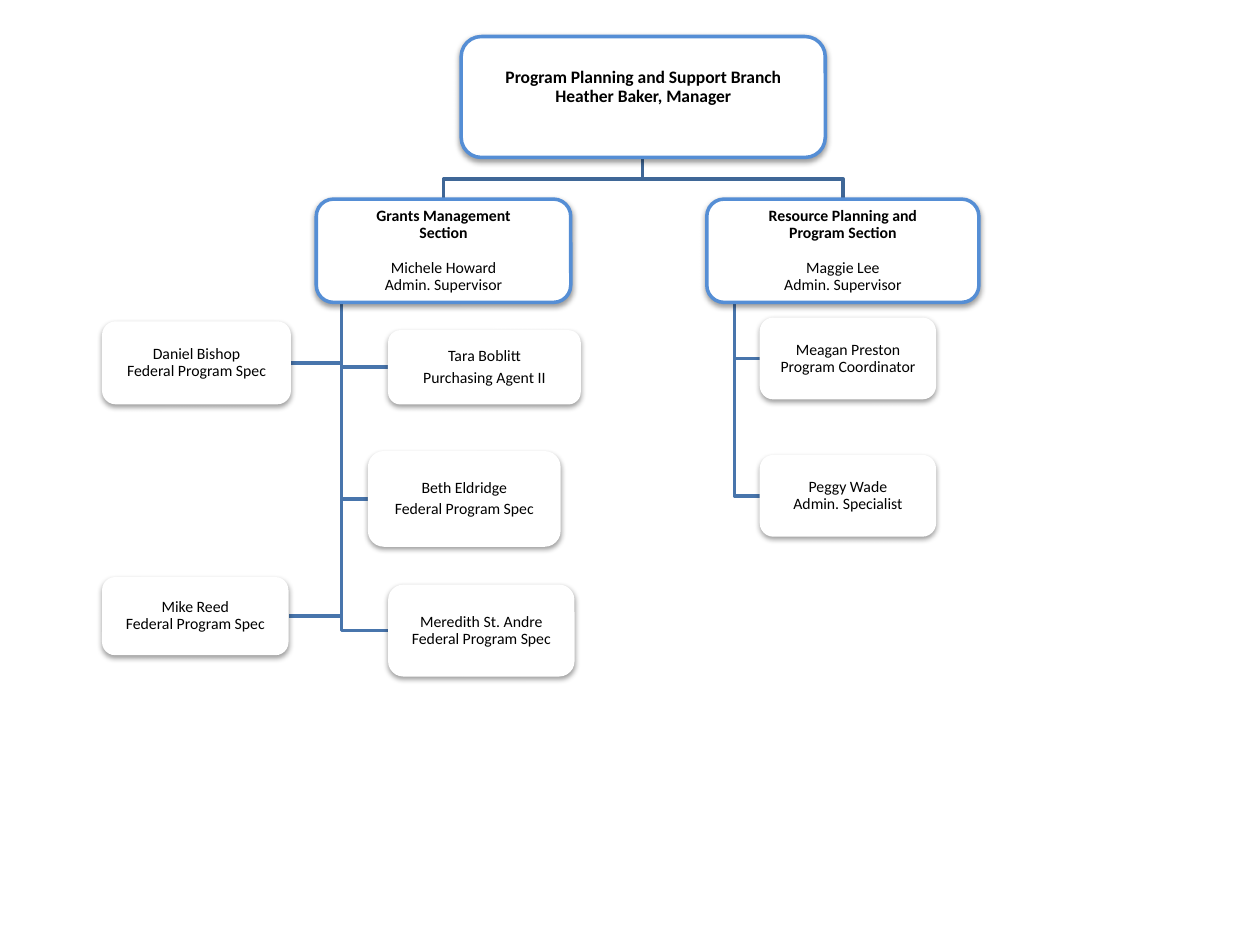
from lxml import etree
from pptx import Presentation
from pptx.dml.color import RGBColor
from pptx.enum import shapes, text
from pptx.oxml import parse_xml
from pptx.util import Inches, Pt

SHADOW = (
    '<a:effectLst xmlns:a="http://schemas.openxmlformats.org/drawingml/2006/main">'
    '<a:outerShdw blurRad="40000" dist="20000" dir="5400000" rotWithShape="0">'
    '<a:srgbClr val="000000"><a:alpha val="38000"/></a:srgbClr>'
    '</a:outerShdw></a:effectLst>'
)


def color(value):
    return RGBColor.from_string(value)


def add_box(s, x, y, w, h, lines, size=9, outline=None, bottom=0.01):
    """Rounded box; each line is (text, bold, space before in points)."""
    sp = s.shapes.add_shape(shapes.MSO_SHAPE.ROUNDED_RECTANGLE,
                            Inches(x), Inches(y), Inches(w), Inches(h))
    sp.fill.solid()
    sp.fill.fore_color.rgb = color("FFFFFF")
    if outline:
        sp.line.color.rgb = color(outline)
        sp.line.width = Pt(2)
    else:
        sp.line.fill.background()
    sp._element.spPr.append(parse_xml(SHADOW))
    tf = sp.text_frame
    tf.word_wrap = True
    tf.vertical_anchor = text.MSO_ANCHOR.MIDDLE
    tf.margin_left = tf.margin_right = tf.margin_top = Inches(0.01)
    tf.margin_bottom = Inches(bottom)
    for i, (line, bold, before) in enumerate(lines):
        p = tf.add_paragraph() if i else tf.paragraphs[0]
        p.text = line
        p.alignment = text.PP_ALIGN.CENTER
        p.line_spacing = 0.9
        if before:
            p.space_before = Pt(before)
        p.font.name = "Calibri"
        p.font.size = Pt(size)
        p.font.bold = bold
        p.font.color.rgb = color("000000")


prs = Presentation()
prs.slide_width, prs.slide_height = Inches(10), Inches(7.5)
s = prs.slides.add_slide(prs.slide_layouts[6])

# Staff: x, y, w, h, name, title, gap before title
grants_staff = [
    (0.81, 2.55, 1.5, 0.66, "Daniel Bishop", "Federal Program Spec", 0),
    (0.81, 4.58, 1.48, 0.62, "Mike Reed", "Federal Program Spec", 0),
    (3.08, 4.64, 1.48, 0.73, "Meredith St. Andre", "Federal Program Spec", 0),
    (3.08, 2.62, 1.53, 0.59, "Tara Boblitt", "Purchasing Agent II", 2.7),
    (2.92, 3.58, 1.53, 0.76, "Beth Eldridge", "Federal Program Spec", 2.7),
]
resource_staff = [
    (6.03, 2.52, 1.4, 0.65, "Meagan Preston", "Program Coordinator", 0),
    (6.03, 3.61, 1.4, 0.65, "Peggy Wade", "Admin. Specialist", 0),
]

# Sections: x, w, title, supervisor, trunk x, staff
section_y, section_h = 1.58, 0.82
sections = [
    (2.51, 2.02, "Grants Management\vSection", "Michele Howard", 2.71, grants_staff),
    (5.61, 2.16, "Resource Planning and\vProgram Section", "Maggie Lee", 5.83, resource_staff),
]

# Connector lines: from the branch to each section, from each section to its staff
routes = []
branch_x, branch_bottom, middle_y = 5.1, 1.26, 1.42
for x, w, _, _, trunk_x, staff in sections:
    center = x + w / 2
    routes.append(("3F6797", [(branch_x, branch_bottom), (branch_x, middle_y),
                              (center, middle_y), (center, section_y)]))
    for bx, by, bw, bh, *_ in staff:
        side = bx if bx > trunk_x else bx + bw
        y = by + bh / 2
        routes.append(("4875AC", [(trunk_x, section_y + section_h), (trunk_x, y), (side, y)]))

for line_color, points in routes:
    (x0, y0), *rest = [(Inches(x), Inches(y)) for x, y in points]
    builder = s.shapes.build_freeform(x0, y0)
    builder.add_line_segments(rest, close=False)
    sp = builder.convert_to_shape()
    sp.shadow.inherit = False
    sp.fill.background()
    sp.line.color.rgb = color(line_color)
    sp.line.width = Pt(2)

# Branch box
add_box(s, 3.66, 0.29, 2.89, 0.96,
        [("Program Planning and Support Branch", True, 0), ("Heather Baker, Manager", True, 0)],
        size=10, outline="558ED5", bottom=0.16)

# Section and staff boxes
for x, w, title, supervisor, _, staff in sections:
    add_box(s, x, section_y, w, section_h,
            [(title, True, 0), (supervisor, False, 10), ("Admin. Supervisor", False, 0)],
            outline="558ED5")
    for bx, by, bw, bh, name, job, gap in staff:
        add_box(s, bx, by, bw, bh, [(name, False, 0), (job, False, gap)])

prs.save("out.pptx")
